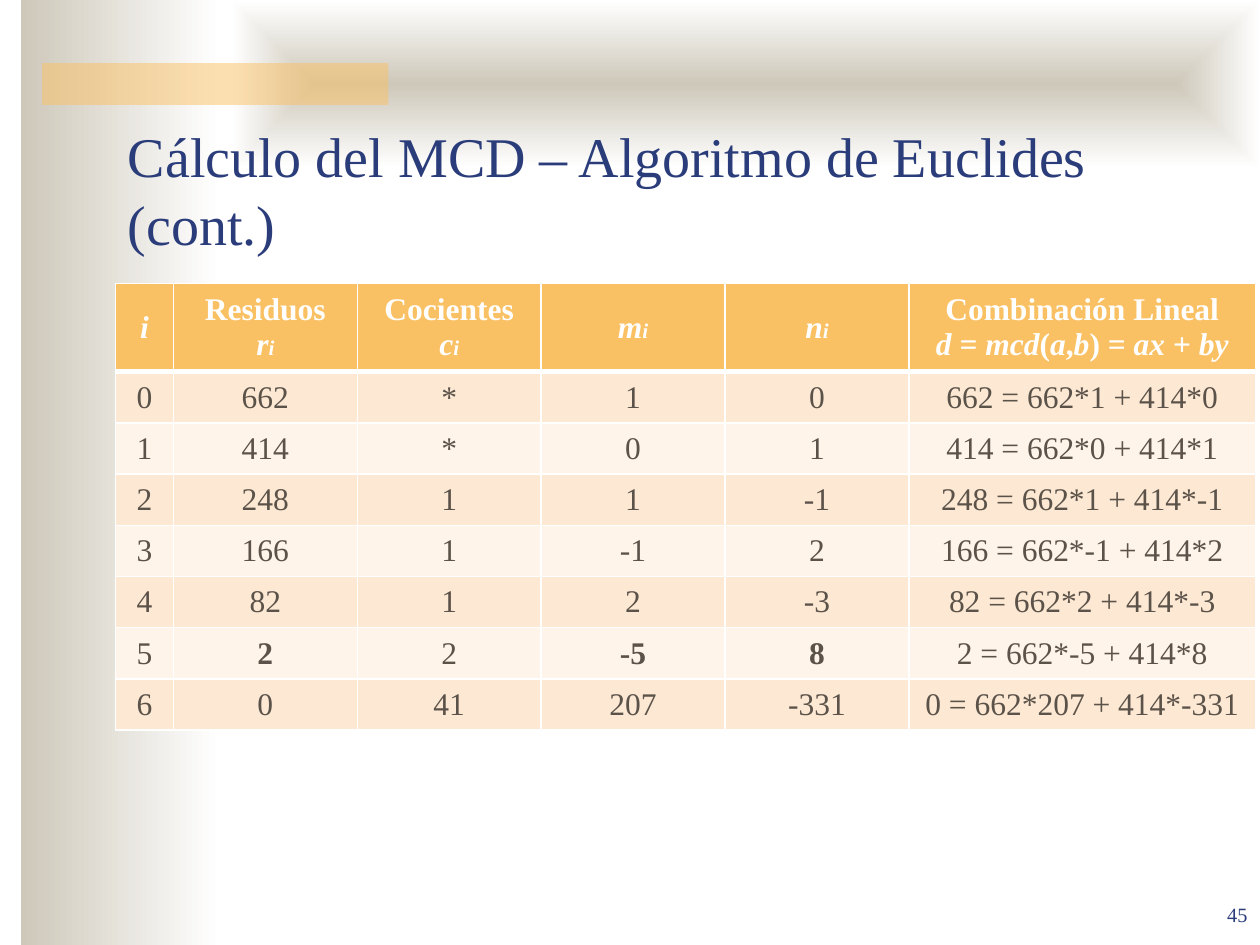
import dataclasses

import pptx
import pptx.dml.color
import pptx.enum.shapes
import pptx.enum.text
import pptx.oxml
import pptx.util
from lxml import etree

Pt = pptx.util.Pt
RGB = pptx.dml.color.RGBColor.from_string
ALIGN = pptx.enum.text.PP_ALIGN
ANCHOR = pptx.enum.text.MSO_ANCHOR
DML = "http://schemas.openxmlformats.org/drawingml/2006/main"


@dataclasses.dataclass(frozen=True)
class Theme:
    font: str = "Times New Roman"
    ink: str = "2A3D7A"
    body: str = "5B5249"
    white: str = "FFFFFF"
    sand: str = "CEC8BA"
    accent: str = "FAC164"
    bands: tuple = ("FDE9D3", "FEF4EA")
    title_size: int = 32
    number_size: int = 20
    cell_size: int = 18
    index_size: int = 12
    rule: int = 1
    header_rule: int = 3


THEME = Theme()
A, B = 662, 414
HEADINGS = [
    [[("i", "italic")]],
    [[("Residuos", "")], [("r", "italic"), ("i", "index")]],
    [[("Cocientes", "")], [("c", "italic"), ("i", "index")]],
    [[("m", "italic"), ("i", "index")]],
    [[("n", "italic"), ("i", "index")]],
    [[("Combinación Lineal", "")],
     [("d", "italic"), (" = ", ""), ("mcd", "italic"), ("(", ""), ("a", "italic"),
      (",", ""), ("b", "italic"), (") = ", ""), ("ax", "italic"), (" + ", ""),
      ("by", "italic")]],
]
STEPS = [
    (662, "*", 1, 0),
    (414, "*", 0, 1),
    (248, 1, 1, -1),
    (166, 1, -1, 2),
    (82, 1, 2, -3),
    (2, 2, -5, 8),
    (0, 41, 207, -331),
]
GCD_STEP = 5
GCD_COLUMNS = (1, 3, 4)


def add_run(paragraph, text, size, color, bold=False, italic=False):
    run = paragraph.add_run()
    run.text = text
    font = run.font
    font.name, font.size = THEME.font, Pt(size)
    font.bold, font.italic = bold, italic
    font.color.rgb = RGB(color)
    return run


def add_panel(slide, box):
    panel = slide.shapes.add_shape(
        pptx.enum.shapes.MSO_SHAPE.RECTANGLE, *map(Pt, box))
    panel.shadow.inherit = False
    panel.line.fill.background()
    return panel


def fade_panel(slide, box):
    panel = add_panel(slide, box)
    panel.fill.gradient()
    panel.fill.gradient_angle = 0
    for stop, color in zip(panel.fill.gradient_stops, (THEME.sand, THEME.white)):
        stop.color.rgb = RGB(color)
    return panel


def add_backdrop(slide, box):
    left, top, width, height = box
    fade_panel(slide, (left + 12, top, 114, height))

    glow = fade_panel(slide, (left + 132, top, width - 132, 96))
    linear = glow.element.spPr.find(f".//{{{DML}}}lin")
    linear.getparent().replace(linear, pptx.oxml.parse_xml(
        f'<a:path xmlns:a="{DML}" path="shape">'
        '<a:fillToRect l="50000" t="50000" r="50000" b="50000"/></a:path>'))

    bar = add_panel(slide, (left + 24, top + 36, 198, 24))
    bar.fill.solid()
    bar.fill.fore_color.rgb = RGB(THEME.accent)
    color = bar.element.spPr.find(f"{{{DML}}}solidFill/{{{DML}}}srgbClr")
    etree.SubElement(color, f"{{{DML}}}alpha", val="50000")


def add_label(slide, box, text, size, align):
    frame = slide.shapes.add_textbox(*map(Pt, box)).text_frame
    frame.word_wrap = True
    frame.vertical_anchor = ANCHOR.BOTTOM
    paragraph = frame.paragraphs[0]
    paragraph.alignment = align
    return add_run(paragraph, text, size, THEME.ink)


def add_title(slide, box):
    add_label(slide, box, "Cálculo del MCD – Algoritmo de Euclides (cont.)",
              THEME.title_size, ALIGN.LEFT)


def add_page_number(slide, box):
    number = add_label(slide, box, "45", THEME.number_size, ALIGN.RIGHT)
    number.font._element.set("baseline", "30000")


def style_cell(cell, fill, top, bottom):
    properties = cell._tc.get_or_add_tcPr()
    for side, width in zip("LRTB", (THEME.rule, THEME.rule, top, bottom)):
        properties.append(pptx.oxml.parse_xml(
            f'<a:ln{side} xmlns:a="{DML}" w="{Pt(width)}"><a:solidFill>'
            f'<a:srgbClr val="{THEME.white}"/></a:solidFill></a:ln{side}>'))
    cell.fill.solid()
    cell.fill.fore_color.rgb = RGB(fill)
    cell.vertical_anchor = ANCHOR.MIDDLE


def fill_heading(cell, lines):
    style_cell(cell, THEME.accent, THEME.rule, THEME.header_rule)
    for position, line in enumerate(lines):
        frame = cell.text_frame
        paragraph = frame.add_paragraph() if position else frame.paragraphs[0]
        paragraph.alignment = ALIGN.CENTER
        for text, style in line:
            size = THEME.index_size if style == "index" else THEME.cell_size
            add_run(paragraph, text, size, THEME.white, True, style != "")


def add_euclid_table(slide, box):
    left, top, width, height = box
    heading_height, index_width, quotient_width = 50.4, 33.1, 105.1
    step_height = (height - heading_height) / len(STEPS)
    widths = [index_width] + [quotient_width] * 4
    widths.append(width - sum(widths))
    table = slide.shapes.add_table(
        len(STEPS) + 1, len(HEADINGS), *map(Pt, box)).table
    table.horz_banding = False
    for column, column_width in zip(table.columns, widths):
        column.width = Pt(column_width)
    table.rows[0].height = Pt(heading_height)
    for column, lines in enumerate(HEADINGS):
        fill_heading(table.cell(0, column), lines)

    for step, (residue, quotient, m, n) in enumerate(STEPS):
        table.rows[step + 1].height = Pt(step_height)
        combination = f"{residue} = {A}*{m} + {B}*{n}"
        values = (step, residue, quotient, m, n, combination)
        for column, value in enumerate(values):
            cell = table.cell(step + 1, column)
            style_cell(cell, THEME.bands[step % 2],
                       THEME.rule if step else THEME.header_rule, THEME.rule)
            paragraph = cell.text_frame.paragraphs[0]
            paragraph.alignment = ALIGN.CENTER
            bold = step == GCD_STEP and column in GCD_COLUMNS
            add_run(paragraph, str(value), THEME.cell_size, THEME.body, bold)


def main():
    deck = pptx.Presentation()
    deck.slide_width, deck.slide_height = Pt(720), Pt(540)
    slide = deck.slides.add_slide(deck.slide_layouts[6])
    add_backdrop(slide, (0, 0, 720, 540))
    add_title(slide, (66, 42, 654, 108))
    add_euclid_table(slide, (66, 162, 651.6, 255.2))
    add_page_number(slide, (648, 504.5, 72, 36))
    deck.save("out.pptx")


if __name__ == "__main__":
    main()
